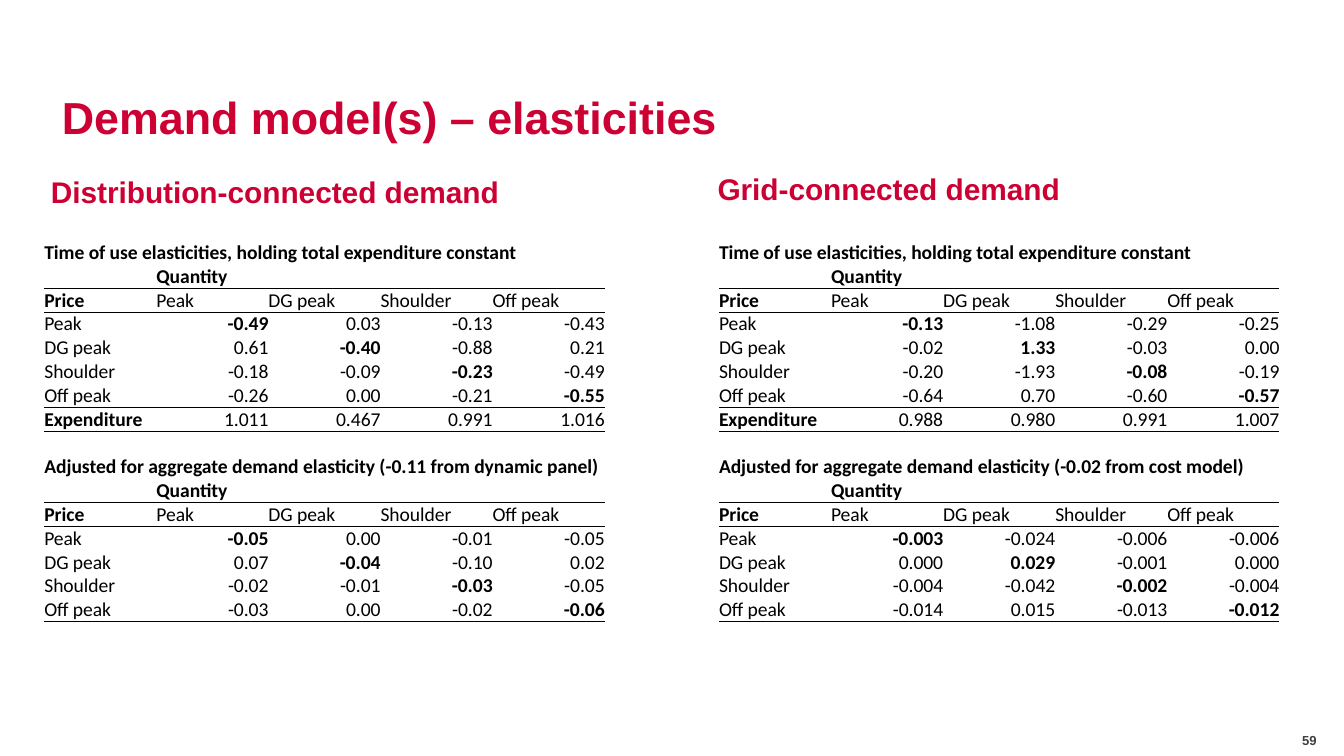
from lxml import etree
from pptx import Presentation
from pptx.dml.color import RGBColor
from pptx.enum.text import MSO_ANCHOR, PP_ALIGN
from pptx.oxml.ns import qn
from pptx.util import Inches, Pt

LEFT, RIGHT = PP_ALIGN.LEFT, PP_ALIGN.RIGHT
TOP, MIDDLE, BOTTOM = MSO_ANCHOR.TOP, MSO_ANCHOR.MIDDLE, MSO_ANCHOR.BOTTOM
COLORS = {"red": "CD0034", "black": "000000", "grey": "404040"}
PLAIN_TABLE = "{2D5ABB26-0587-4C30-8999-92F81FD0307C}"
PERIODS = ["Peak", "DG peak", "Shoulder", "Off peak"]
CONSTANT = "Time of use elasticities, holding total expenditure constant"
RULED_ROWS = [1, 2, 6, 7, 10, 11, 15]
CAPTION_ROWS = [0, 9]


def write(frame, text, size, color, bold=True, name="Arial", align=LEFT):
    paragraph = frame.paragraphs[0]
    paragraph.alignment = align
    font_values = {"size": Pt(size), "name": name, "bold": bold}
    run = paragraph.add_run()
    run.text = text
    for attribute, value in font_values.items():
        setattr(run.font, attribute, value)
    run.font.color.rgb = RGBColor.from_string(COLORS[color])


def add_border(cell, side, visible):
    line = etree.SubElement(cell._tc.get_or_add_tcPr(), qn(f"a:{side}"), w=str(Pt(0.5)))
    if visible:
        fill = etree.SubElement(line, qn("a:solidFill"))
        etree.SubElement(fill, qn("a:srgbClr"), val=COLORS["black"])
    else:
        etree.SubElement(line, qn("a:noFill"))


markets = [
    {
        "heading": "Distribution-connected demand",
        "heading_at": (0.28, 1.24),
        "table_left": 0.33,
        "constant": ["-0.49 0.03 -0.13 -0.43", "0.61 -0.40 -0.88 0.21",
                     "-0.18 -0.09 -0.23 -0.49", "-0.26 0.00 -0.21 -0.55"],
        "expenditure": "1.011 0.467 0.991 1.016",
        "adjustment": "Adjusted for aggregate demand elasticity (-0.11 from dynamic panel)",
        "adjusted": ["-0.05 0.00 -0.01 -0.05", "0.07 -0.04 -0.10 0.02",
                     "-0.02 -0.01 -0.03 -0.05", "-0.03 0.00 -0.02 -0.06"],
    },
    {
        "heading": "Grid-connected demand",
        "heading_at": (5.24, 1.22),
        "table_left": 5.35,
        "constant": ["-0.13 -1.08 -0.29 -0.25", "-0.02 1.33 -0.03 0.00",
                     "-0.20 -1.93 -0.08 -0.19", "-0.64 0.70 -0.60 -0.57"],
        "expenditure": "0.988 0.980 0.991 1.007",
        "adjustment": "Adjusted for aggregate demand elasticity (-0.02 from cost model)",
        "adjusted": ["-0.003 -0.024 -0.006 -0.006", "0.000 0.029 -0.001 0.000",
                     "-0.004 -0.042 -0.002 -0.004", "-0.014 0.015 -0.013 -0.012"],
    },
]

presentation = Presentation()
presentation.slide_width = Inches(10)
presentation.slide_height = Inches(10) * 9 // 16
slide = presentation.slides.add_slide(presentation.slide_layouts[5])

title = slide.shapes.title
title_place = {"left": 0.36, "top": 0.34, "width": 9, "height": 0.9}
for attribute, value in title_place.items():
    setattr(title, attribute, Inches(value))
title.text_frame.vertical_anchor = MIDDLE
write(title.text_frame, "Demand model(s) – elasticities", 24, "red")
title.text_frame.paragraphs[0].line_spacing = Pt(40)

for market in markets:
    rows = []
    for caption, block in ((CONSTANT, "constant"), (market["adjustment"], "adjusted")):
        rows += [[caption], ["", "Quantity"], ["Price", *PERIODS]]
        rows += [[period, *values.split()] for period, values in zip(PERIODS, market[block])]
        if block == "constant":
            rows += [["Expenditure", *market["expenditure"].split()], []]

    table_frame = slide.shapes.add_table(
        len(rows), 5, Inches(market["table_left"]), Inches(1.78), Inches(4.17), Inches(2.87))
    elasticities = table_frame.table
    elasticities.first_row = elasticities.horz_banding = False
    table_frame._element.find(".//" + qn("a:tableStyleId")).text = PLAIN_TABLE
    for column in elasticities.columns:
        column.width = Inches(4.17 / 5)

    for r, entries in enumerate(rows):
        elasticities.rows[r].height = Inches(0.19 if r == 0 else 0.15)
        for c in range(5):
            cell = elasticities.cell(r, c)
            for side in ("left", "right", "top", "bottom"):
                setattr(cell, f"margin_{side}", 0)
            cell.vertical_anchor = BOTTOM
            borders = {"lnL": False, "lnR": False,
                       "lnT": r - 1 in RULED_ROWS, "lnB": r in RULED_ROWS}
            for side, visible in borders.items():
                add_border(cell, side, visible)
            cell.fill.background()
            text = entries[c] if c < len(entries) else ""
            if text:
                numeric = c > 0 and text[-1].isdigit()
                own_price = numeric and entries[0] == PERIODS[c - 1]
                label = r in CAPTION_ROWS or text in ("Quantity", "Price", "Expenditure")
                write(cell.text_frame, text, 10.5, "black", own_price or label,
                      "Calibri", RIGHT if numeric else LEFT)
            else:
                etree.SubElement(cell.text_frame.paragraphs[0]._p, qn("a:endParaRPr"), sz="1050")

    for r in CAPTION_ROWS:
        elasticities.cell(r, 0).merge(elasticities.cell(r, 4))
    table_frame.height = Inches(2.87)

small_texts = [(market["heading"], *market["heading_at"], 3.69, 0.37, 16, "red", TOP)
               for market in markets]
small_texts.append(("59", 9.59, 5.39, 0.46, 0.23, 7, "grey", MIDDLE))
for text, left, top, width, height, size, color, anchor in small_texts:
    box = slide.shapes.add_textbox(Inches(left), Inches(top), Inches(width), Inches(height))
    box.text_frame.word_wrap = True
    box.text_frame.vertical_anchor = anchor
    write(box.text_frame, text, size, color)

presentation.save("out.pptx")
